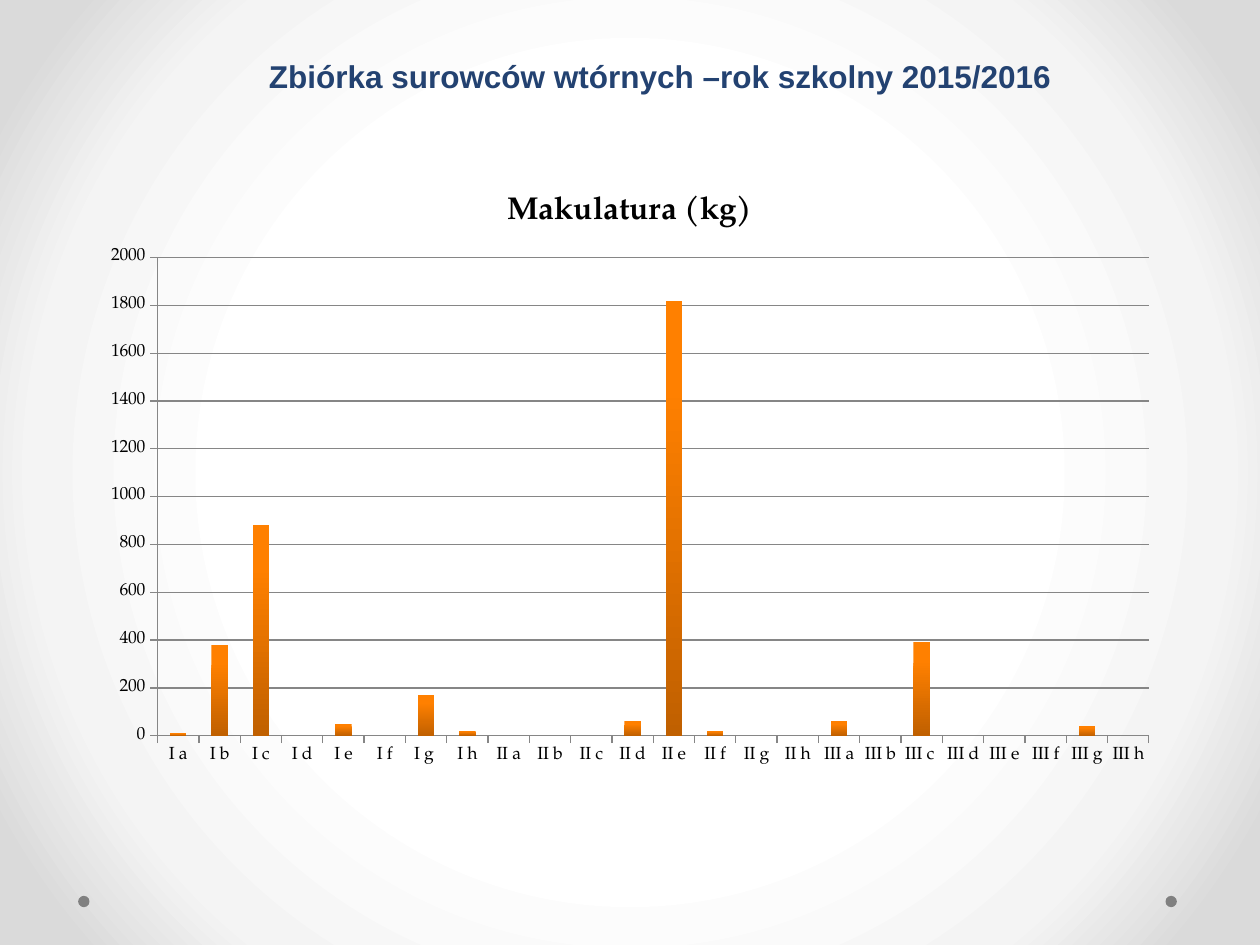
"""Build a slide with a column chart of waste paper collected by each class."""
from lxml.etree import SubElement
from pptx import Presentation
from pptx.chart.data import CategoryChartData
from pptx.dml.color import RGBColor
from pptx.enum.chart import XL_CHART_TYPE, XL_TICK_MARK
from pptx.enum.shapes import MSO_SHAPE
from pptx.enum.text import MSO_AUTO_SIZE, PP_ALIGN
from pptx.oxml.ns import qn
from pptx.util import Inches, Pt


def color(value):
    """Turn a hex string into a colour."""
    return RGBColor.from_string(value)


def write(paragraph, text, size, font, fill, bold=True):
    """Put one formatted run into a paragraph."""
    run = paragraph.add_run()
    run.text = text
    run.font.size = Pt(size)
    run.font.name = font
    run.font.bold = bold
    run.font.color.rgb = color(fill)


presentation = Presentation()
presentation.slide_width = Inches(10)
presentation.slide_height = Inches(7.5)
slide = presentation.slides.add_slide(presentation.slide_layouts[6])

background = slide.background.fill
background.gradient()
gradient = slide.background._cSld.find(".//" + qn("a:gradFill"))
for child in list(gradient):
    gradient.remove(child)
stops = SubElement(gradient, qn("a:gsLst"))
for position, shade in ((50, "FFFFFF"), (76, "F4F4F4"), (92, "DADADA")):
    stop = SubElement(stops, qn("a:gs"), pos=str(position * 1000))
    SubElement(stop, qn("a:srgbClr"), val=shade)
circle = SubElement(gradient, qn("a:path"), path="circle")
SubElement(circle, qn("a:fillToRect"), l="50000", t="50000", r="50000", b="50000")

for left in (9.25, 0.62):
    dot = slide.shapes.add_shape(
        MSO_SHAPE.OVAL, Inches(left), Inches(7.11), Inches(0.09), Inches(0.09))
    dot.shadow.inherit = False
    dot.fill.solid()
    dot.fill.fore_color.rgb = color("808080")
    dot.line.fill.background()

heading = slide.shapes.add_textbox(Inches(0.83), Inches(0.36), Inches(8.82), Inches(0.89))
heading.text_frame.word_wrap = True
heading.text_frame.auto_size = MSO_AUTO_SIZE.SHAPE_TO_FIT_TEXT
paragraph = heading.text_frame.paragraphs[0]
paragraph.alignment = PP_ALIGN.CENTER
paragraph.line_spacing = 1.15
paragraph.space_after = Pt(10)
write(paragraph, "Zbiórka surowców wtórnych –rok szkolny 2015/2016", 18, "Arial", "234271")

collected = {
    "I a": 10, "I b": 380, "I c": 880, "I d": None,
    "I e": 50, "I f": None, "I g ": 170, "I h": 20,
    "II a": None, "II b": 0, "II c": None, "II d": 60,
    "II e": 1820, "II f": 20, "II g": 0, "II h": None,
    "III a": 60, "III b": None, "III c ": 390, "III d": None,
    "III e": None, "III f": None, "III g": 40, "III h": None,
}
chart_data = CategoryChartData()
chart_data.categories = list(collected)
chart_data.add_series("Makulatura (kg)", list(collected.values()))
chart = slide.shapes.add_chart(
    XL_CHART_TYPE.COLUMN_CLUSTERED, Inches(0.71), Inches(1.34), Inches(8.58), Inches(4.83),
    chart_data).chart
chart.has_legend = False
chart.font.size = Pt(10)
chart.font.name = "TeX Gyre Pagella"
chart.font.color.rgb = color("000000")
chart.has_title = True
write(chart.chart_title.text_frame.paragraphs[0], "Makulatura (kg)", 18,
      "TeX Gyre Pagella", "000000")
chart.chart_title.include_in_layout = False

for axis in (chart.category_axis, chart.value_axis):
    axis.major_tick_mark = XL_TICK_MARK.OUTSIDE
    axis.minor_tick_mark = XL_TICK_MARK.NONE
    axis.format.line.color.rgb = color("868686")
    axis.format.line.width = Pt(0.75)
chart.value_axis.minimum_scale = 0
chart.value_axis.maximum_scale = 2000
chart.value_axis.major_unit = 200
gridlines = chart.value_axis.major_gridlines.format.line
gridlines.color.rgb = color("868686")
gridlines.width = Pt(0.75)

plot = chart.plots[0]
plot.gap_width = 150
plot.vary_by_categories = False
series = plot.series[0]
series.invert_if_negative = False
bar_fill = series.format.fill
bar_fill.gradient()
bar_fill.gradient_angle = 270
for stop, shade, position in zip(bar_fill.gradient_stops, ("FF8000", "C06000"), (0.2, 1)):
    stop.color.rgb = color(shade)
    stop.position = position

presentation.save("out.pptx")
